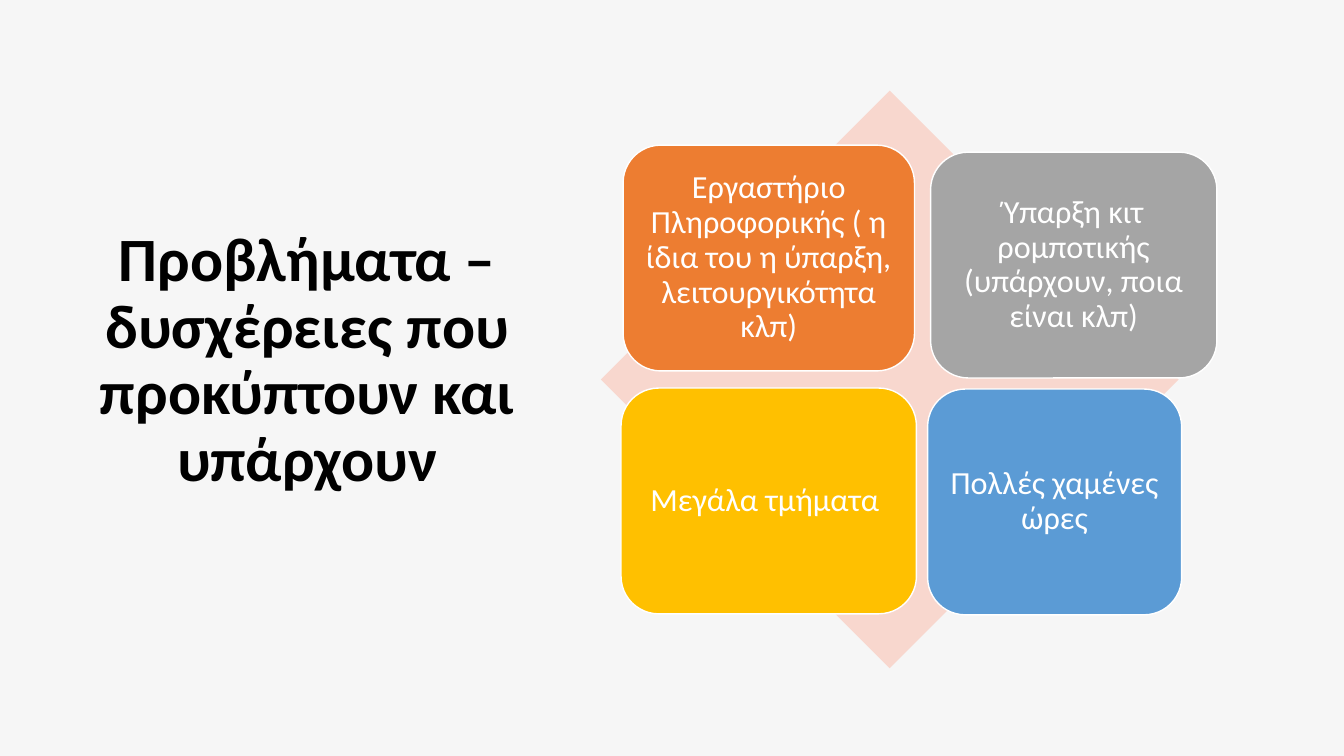
"""Build a slide with a title and four problem cards over a diamond."""
from pptx import Presentation
from pptx.dml.color import RGBColor
from pptx.enum.shapes import MSO_SHAPE
from pptx.enum.text import MSO_ANCHOR, MSO_AUTO_SIZE, PP_ALIGN
from pptx.util import Inches, Pt

DIAMOND = MSO_SHAPE.DIAMOND
ROUNDED = MSO_SHAPE.ROUNDED_RECTANGLE
MIDDLE = MSO_ANCHOR.MIDDLE
NO_AUTOFIT = MSO_AUTO_SIZE.NONE
CENTER = PP_ALIGN.CENTER

BACKGROUND = RGBColor(0xF6, 0xF6, 0xF6)
BLACK = RGBColor(0x00, 0x00, 0x00)
WHITE = RGBColor(0xFF, 0xFF, 0xFF)
PINK = RGBColor(0xF8, 0xD7, 0xCE)
ORANGE = RGBColor(0xED, 0x7D, 0x31)
GRAY = RGBColor(0xA5, 0xA5, 0xA5)
GOLD = RGBColor(0xFF, 0xC0, 0x00)
BLUE = RGBColor(0x5B, 0x9B, 0xD5)

CARD_HEIGHT = 2.24
CARDS = [
    (6.18, 1.44, 2.89, ORANGE, "Εργαστήριο Πληροφορικής ( η ίδια του η ύπαρξη, λειτουργικότητα κλπ)"),
    (9.23, 1.51, 2.84, GRAY, "Ύπαρξη κιτ ρομποτικής (υπάρχουν, ποια είναι κλπ)"),
    (6.16, 3.85, 2.93, GOLD, "Μεγάλα τμήματα "),
    (9.2, 3.86, 2.52, BLUE, "Πολλές χαμένες ώρες"),
]


def write_text(shape, text, size, color, bold, **frame_format):
    text_frame = shape.text_frame
    frame_format |= {"word_wrap": True, "auto_size": NO_AUTOFIT, "vertical_anchor": MIDDLE}
    for name, value in frame_format.items():
        setattr(text_frame, name, value)
    text_frame.text = text
    paragraph = text_frame.paragraphs[0]
    paragraph.alignment = CENTER
    paragraph.line_spacing = 0.9
    font = paragraph.runs[0].font
    font.color.rgb = color
    for name, value in {"name": "Calibri", "size": Pt(size), "bold": bold}.items():
        setattr(font, name, value)


def add_filled_shape(kind, left, top, width, height, color):
    shape = slide.shapes.add_shape(kind, Inches(left), Inches(top), Inches(width), Inches(height))
    shape.shadow.inherit = False
    shape.fill.solid()
    shape.fill.fore_color.rgb = color
    return shape


presentation = Presentation()
presentation.slide_width = Inches(13.33)
presentation.slide_height = Inches(7.5)
slide = presentation.slides.add_slide(presentation.slide_layouts[5])
slide.background.fill.solid()
slide.background.fill.fore_color.rgb = BACKGROUND

title = slide.shapes.title
title_box = {"left": 0.55, "top": 0.74, "width": 5, "height": 5.69}
for name, value in title_box.items():
    setattr(title, name, Inches(value))
write_text(title, "Προβλήματα – δυσχέρειες που προκύπτουν και υπάρχουν", 44, BLACK, True)

diamond = add_filled_shape(DIAMOND, 5.96, 0.9, 5.73, 5.73, PINK)
diamond.line.fill.background()

margins = {f"margin_{side}": Inches(0.1) for side in ("left", "top", "right", "bottom")}
for left, top, width, color, text in CARDS:
    card = add_filled_shape(ROUNDED, left, top, width, CARD_HEIGHT, color)
    card.line.color.rgb = WHITE
    card.line.width = Pt(1)
    write_text(card, text, 23, WHITE, False, **margins)

presentation.save("out.pptx")
